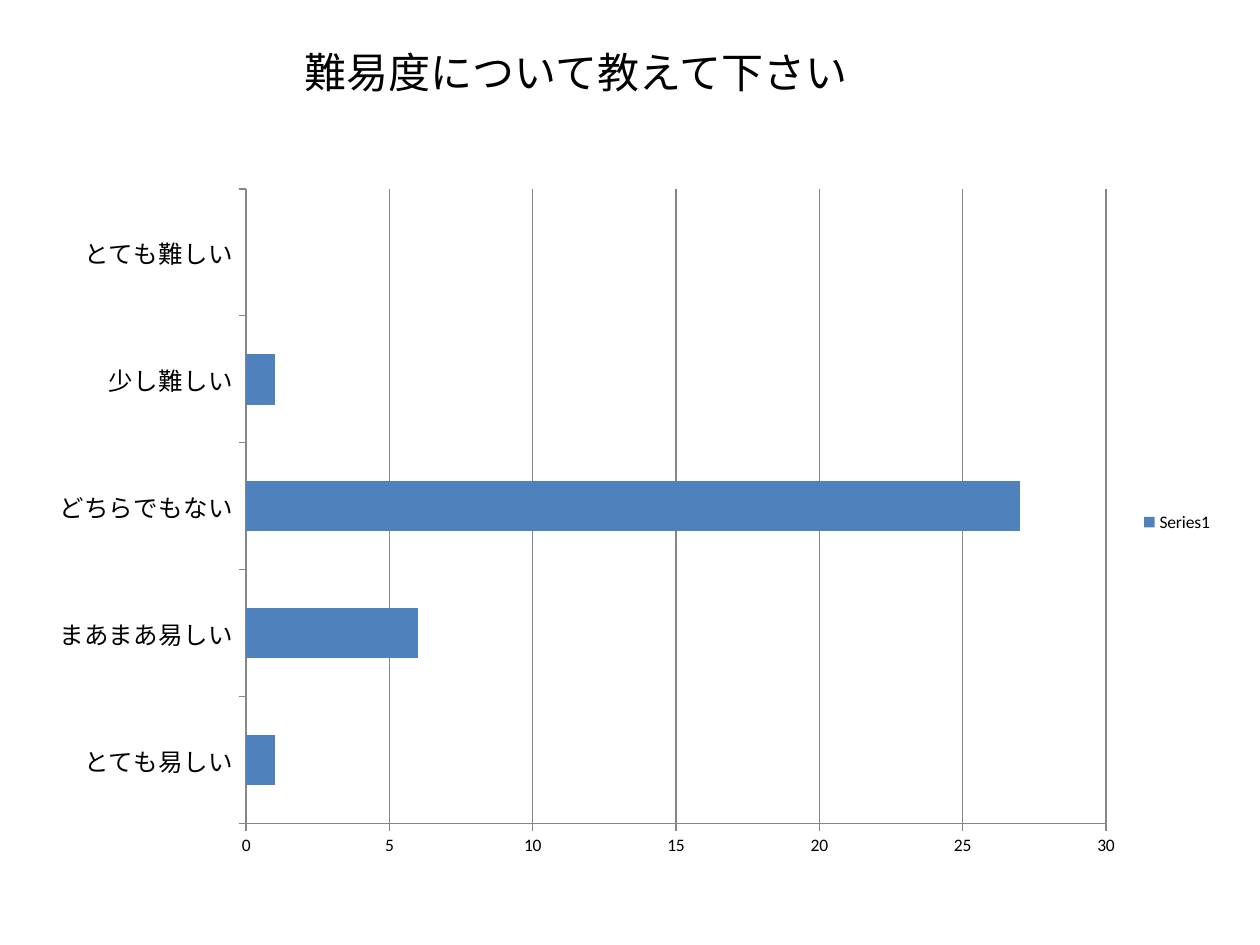
from dataclasses import dataclass

from pptx import Presentation
from pptx.chart.data import CategoryChartData
from pptx.dml.color import RGBColor
from pptx.enum.chart import XL_CHART_TYPE as ChartType
from pptx.enum.chart import XL_LEGEND_POSITION as LegendPosition
from pptx.enum.chart import XL_TICK_MARK as TickMark
from pptx.enum.text import MSO_ANCHOR as Anchor
from pptx.enum.text import PP_ALIGN as Align
from pptx.util import Inches, Pt


@dataclass(frozen=True)
class Theme:
    """Colours, font and type sizes of the slide."""
    font: str = "Calibri"
    ink: RGBColor = RGBColor(0x00, 0x00, 0x00)
    bar: RGBColor = RGBColor(0x4F, 0x81, 0xBD)
    rule: RGBColor = RGBColor(0x86, 0x86, 0x86)
    title_size: Pt = Pt(24)
    category_size: Pt = Pt(14)
    chart_size: Pt = Pt(10)
    rule_width: Pt = Pt(0.75)


@dataclass(frozen=True)
class Box:
    """Place and size of a region in inches."""
    left: float
    top: float
    width: float
    height: float

    def lengths(self):
        """Return left, top, width and height as lengths."""
        return [Inches(side) for side in (self.left, self.top, self.width, self.height)]


THEME = Theme()
ANSWERS = {
    "とても易しい": 1,
    "まあまあ易しい": 6,
    "どちらでもない": 27,
    "少し難しい": 1,
    "とても難しい": 0,
}


def style_font(font, size):
    """Apply the theme typeface and ink at the given size."""
    font.name = THEME.font
    font.size = size
    font.bold = False
    font.color.rgb = THEME.ink


def write_text(frame, text, size, align=Align.LEFT, anchor=Anchor.TOP):
    """Write one formatted paragraph into a text frame."""
    frame.word_wrap = True
    frame.vertical_anchor = anchor
    para = frame.paragraphs[0]
    para.alignment = align
    span = para.add_run()
    span.text = text
    style_font(span.font, size)


def style_rule(line):
    """Draw an axis or grid line in the theme's rule style."""
    line.color.rgb = THEME.rule
    line.width = THEME.rule_width


def place_title(page, box, text):
    """Move the title placeholder into its box and fill it."""
    title = page.shapes.title
    title.left, title.top, title.width, title.height = box.lengths()
    write_text(title.text_frame, text, size=THEME.title_size,
               align=Align.CENTER, anchor=Anchor.MIDDLE)


def place_answer_chart(page, box, answers):
    """Place the bar chart of answer counts in its box."""
    data = CategoryChartData()
    data.categories = list(answers)
    data.add_series("Series1", list(answers.values()))
    chart = page.shapes.add_chart(ChartType.BAR_CLUSTERED, *box.lengths(), data).chart
    style_font(chart.font, THEME.chart_size)
    chart.has_title = False
    chart.has_legend = True
    chart.legend.position = LegendPosition.RIGHT
    chart.legend.include_in_layout = False

    plot = chart.plots[0]
    plot.gap_width = 150
    plot.vary_by_categories = False
    fill = plot.series[0].format.fill
    fill.solid()
    fill.fore_color.rgb = THEME.bar

    counts = chart.value_axis
    counts.minimum_scale, counts.maximum_scale, counts.major_unit = 0, 30, 5
    counts.has_major_gridlines = True
    style_rule(counts.major_gridlines.format.line)
    for axis, size in ((chart.category_axis, THEME.category_size),
                       (counts, THEME.chart_size)):
        axis.major_tick_mark = TickMark.OUTSIDE
        axis.minor_tick_mark = TickMark.NONE
        style_rule(axis.format.line)
        style_font(axis.tick_labels.font, size)


def main():
    """Build the survey slide and save it."""
    deck = Presentation()
    deck.slide_width, deck.slide_height = Inches(10), Inches(7.5)
    page = deck.slides.add_slide(deck.slide_layouts[5])
    place_title(page, Box(0.12, 0.19, 8.9, 0.76), "難易度について教えて下さい")
    place_answer_chart(page, Box(0.28, 1.39, 9.45, 5.51), ANSWERS)
    deck.save("out.pptx")


if __name__ == "__main__":
    main()
